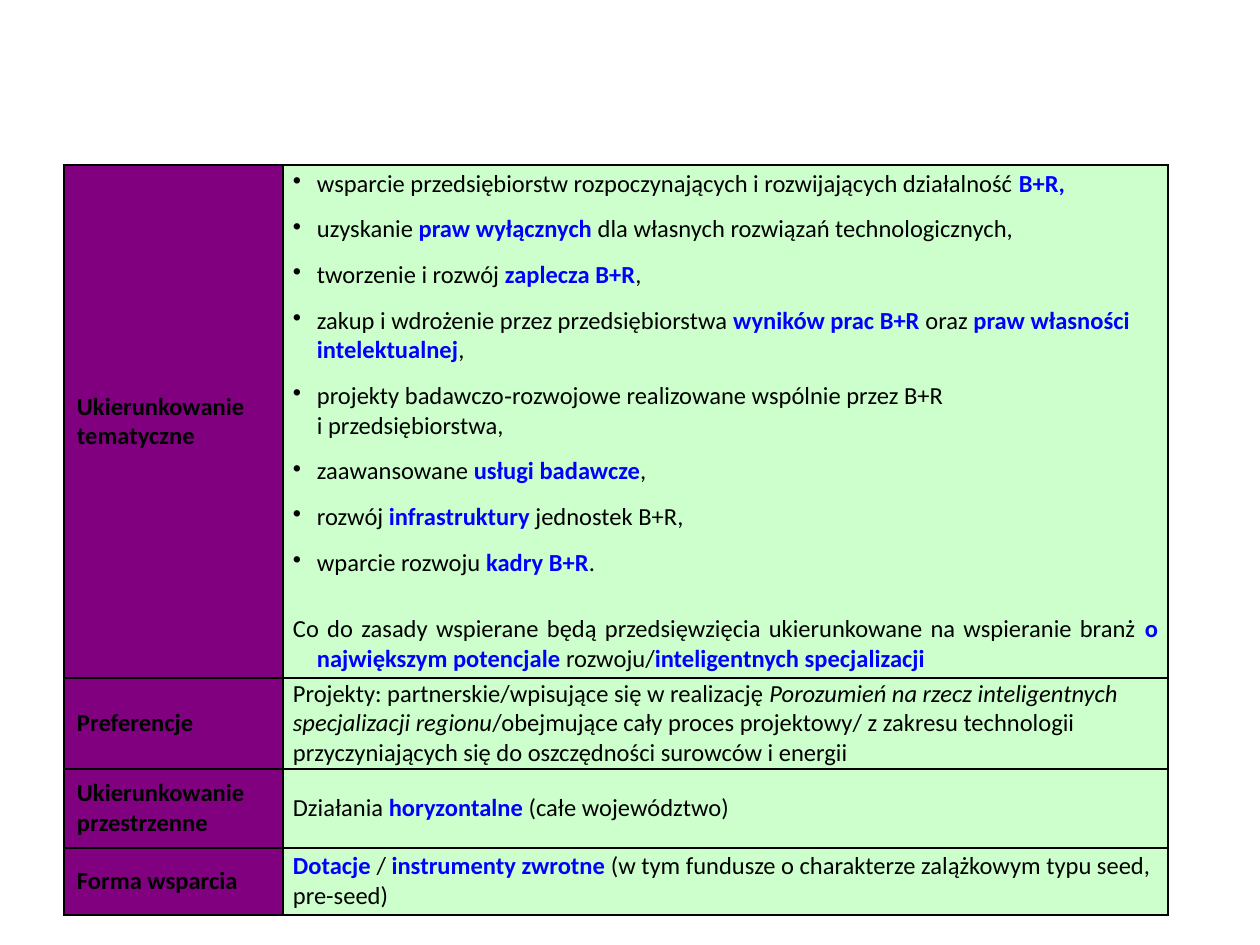
import pptx
import pptx.dml.color
import pptx.enum.text
import pptx.oxml
import pptx.oxml.ns
import pptx.util

SCALE = 914400 / 126  # EMU in one px


def px(length):
    return pptx.util.Emu(round(length * SCALE))


THEME = {
    "font": "Calibri",
    "hyphen_font": "Arial",
    "size": 14,
    "text": "000000",
    "accent": "0000FF",
    "label_fill": "800080",
    "body_fill": "CCFFCC",
    "border": "000000",
    "border_width": 1,
}
COLUMN_WIDTHS = [219, 885]
ROW_HEIGHTS = [513, 91, 79, 67]
HANGING = 24
TAB = 166

# Each run is (text, style); styles are plain, key, italic, hyphen and label.
BULLETS = [
    [("wsparcie przedsiębiorstw rozpoczynających i rozwijających działalność ", "plain"),
     ("B+R,", "key")],
    [("uzyskanie ", "plain"), ("praw wyłącznych", "key"),
     (" dla własnych rozwiązań technologicznych,", "plain")],
    [("tworzenie i rozwój ", "plain"), ("zaplecza B+R", "key"), (",", "plain")],
    [("zakup i wdrożenie przez przedsiębiorstwa ", "plain"), ("wyników prac B+R", "key"),
     (" oraz ", "plain"), ("praw własności intelektualnej", "key"), (",", "plain")],
    [("projekty badawczo", "plain"), ("-", "hyphen"),
     ("rozwojowe realizowane wspólnie przez B+R ", "plain"), ("\n", "break"),
     ("i przedsiębiorstwa,", "plain")],
    [("zaawansowane ", "plain"), ("usługi badawcze", "key"), (",", "plain")],
    [("rozwój ", "plain"), ("infrastruktury", "key"), (" jednostek B+R,", "plain")],
    [("wparcie rozwoju ", "plain"), ("kadry B+R", "key"), (".", "plain")],
]
SUMMARY = [
    ("Co do zasady wspierane będą przedsięwzięcia ukierunkowane na wspieranie branż ", "plain"),
    ("o największym potencjale ", "key"), ("rozwoju/", "plain"),
    ("inteligentnych specjalizacji", "key"),
]
PREFERENCES = [
    ("Projekty: partnerskie/wpisujące się w realizację ", "plain"),
    ("Porozumień na rzecz inteligentnych specjalizacji regionu", "italic"),
    ("/obejmujące cały proces projektowy/ z zakresu technologii przyczyniających się "
     "do oszczędności surowców i energii", "plain"),
]
AREA = [("Działania ", "plain"), ("horyzontalne ", "key"), ("(całe województwo)", "plain")]
SUPPORT = [
    ("Dotacje ", "key"), ("/ ", "plain"), ("instrumenty zwrotne ", "key"),
    ("(w tym fundusze o charakterze zalążkowym typu seed, pre-seed)", "plain"),
]

# Each paragraph is (kind, runs).
ROWS = [
    ("Ukierunkowanie tematyczne",
     [("bullet", runs) for runs in BULLETS] + [("summary", SUMMARY)]),
    ("Preferencje", [("body", PREFERENCES)]),
    ("Ukierunkowanie przestrzenne", [("body", AREA)]),
    ("Forma wsparcia", [("body", SUPPORT)]),
]


def fill_cell(cell, fill, margins, paragraphs):
    """Draw the borders and background of a cell and write its paragraphs."""
    properties = cell._tc.get_or_add_tcPr()
    for side in ("lnL", "lnR", "lnT", "lnB"):
        properties.append(pptx.oxml.parse_xml(
            f'<a:{side} {pptx.oxml.ns.nsdecls("a")} w="{pptx.util.Pt(THEME["border_width"])}">'
            f'<a:solidFill><a:srgbClr val="{THEME["border"]}"/></a:solidFill></a:{side}>'))
    cell.fill.solid()
    cell.fill.fore_color.rgb = pptx.dml.color.RGBColor.from_string(fill)
    cell.vertical_anchor = pptx.enum.text.MSO_ANCHOR.MIDDLE
    cell.margin_left = cell.margin_right = px(margins[0])
    cell.margin_top = cell.margin_bottom = px(margins[1])

    for index, (kind, runs) in enumerate(paragraphs):
        frame = cell.text_frame
        paragraph = frame.add_paragraph() if index else frame.paragraphs[0]
        summary = kind == "summary"
        paragraph.space_before = pptx.util.Pt((18 if summary else 6) if index else 0)
        paragraph.space_after = pptx.util.Pt(6 if summary else 3)
        if summary:
            paragraph.alignment = pptx.enum.text.PP_ALIGN.JUSTIFY
        if kind in ("bullet", "summary"):
            layout = paragraph._p.get_or_add_pPr()
            layout.set("marL", str(px(HANGING)))
            layout.set("indent", str(-px(HANGING)))
            namespace = pptx.oxml.ns.nsdecls("a")
            marker = '<a:buNone {}/>' if summary else '<a:buChar {} char="•"/>'
            layout.append(pptx.oxml.parse_xml(marker.format(namespace)))
            layout.append(pptx.oxml.parse_xml(
                f'<a:tabLst {namespace}><a:tab pos="{px(TAB)}" algn="l"/></a:tabLst>'))
        for text, style in runs:
            if style == "break":
                paragraph.add_line_break()
                continue
            run = paragraph.add_run()
            run.text = text
            run.font.name = THEME["hyphen_font" if style == "hyphen" else "font"]
            run.font.size = pptx.util.Pt(THEME["size"])
            run.font.bold = style in ("key", "label")
            run.font.italic = style == "italic"
            run.font.color.rgb = pptx.dml.color.RGBColor.from_string(
                THEME["accent" if style == "key" else "text"])


presentation = pptx.Presentation()
presentation.slide_width = px(1260)
presentation.slide_height = px(945)
slide = presentation.slides.add_slide(presentation.slide_layouts[6])

table = slide.shapes.add_table(
    len(ROW_HEIGHTS), len(COLUMN_WIDTHS), px(64), px(165),
    px(sum(COLUMN_WIDTHS)), px(sum(ROW_HEIGHTS))).table
table.first_row = False
table.horz_banding = False
for column, width in zip(table.columns, COLUMN_WIDTHS):
    column.width = px(width)

for row, height, (label, paragraphs) in zip(table.rows, ROW_HEIGHTS, ROWS):
    row.height = px(height)
    label_cell, body_cell = row.cells
    fill_cell(label_cell, THEME["label_fill"], (13, 6), [("body", [(label, "label")])])
    fill_cell(body_cell, THEME["body_fill"], (10, 0), paragraphs)

presentation.save("out.pptx")
